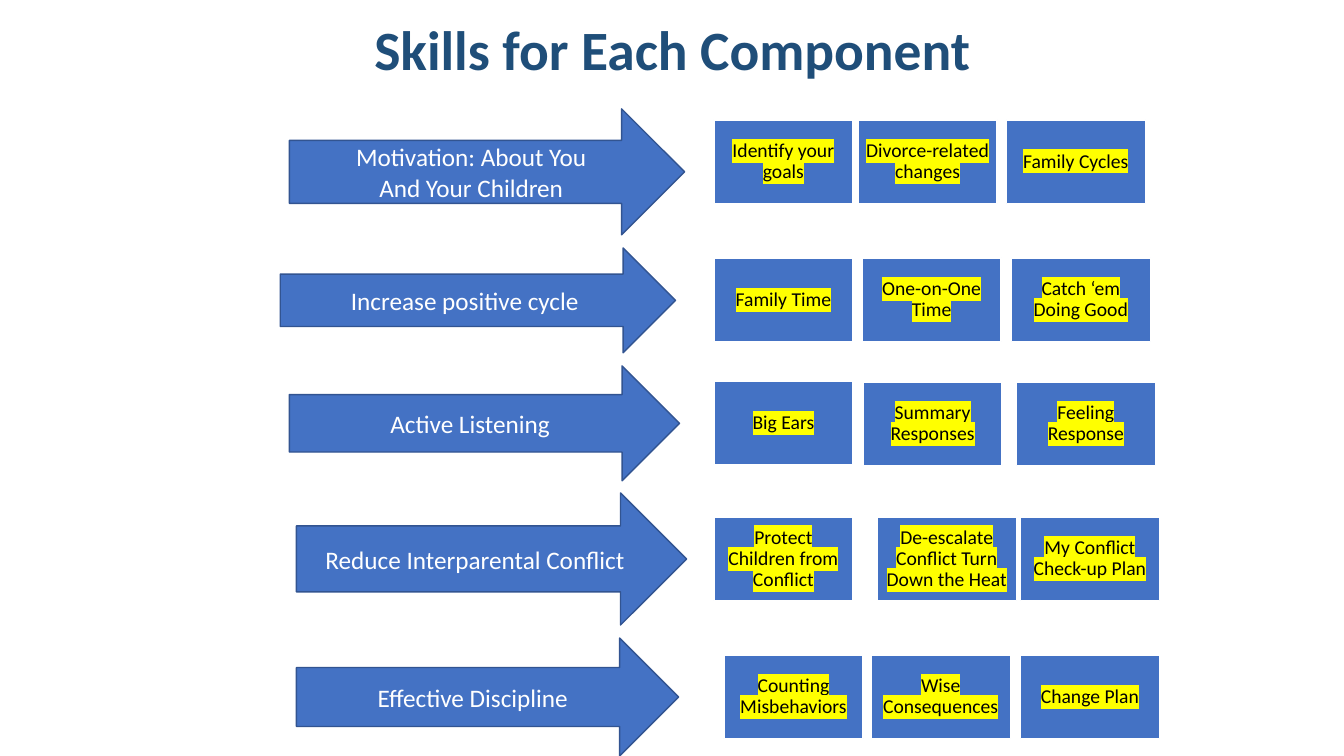
import pptx
import pptx.util
import pptx.dml.color
import pptx.enum.shapes
import pptx.enum.text
import pptx.oxml.ns
import lxml.etree

PX = 9144
COLORS = {"title": "1F4E79", "blue": "4472C4", "edge": "325491",
          "white": "FFFFFF", "black": "000000", "marker": "FFFF00"}
CARD_WIDTH, CARD_HEIGHT = 138, 83
ROWS = [
    ((287, 108, 392, 125), ["Motivation: About You", "And Your Children"],
     [(708, 119, "Identify your goals"), (851, 119, "Divorce-related changes"),
      (998, 119, "Family Cycles")]),
    ((278, 246, 392, 104), ["Increase positive cycle"],
     [(708, 256, "Family Time"), (855, 256, "One-on-One Time"),
      (1003, 256, "Catch ‘em Doing Good")]),
    ((287, 363, 387, 114), ["Active Listening"],
     [(708, 378, "Big Ears"), (856, 379, "Summary Responses"),
      (1008, 379, "Feeling Response")]),
    ((294, 489, 387, 131), ["Reduce Interparental Conflict"],
     [(708, 513, "Protect Children from Conflict"),
      (870, 513, "De-escalate Conflict Turn Down the Heat"),
      (1012, 513, "My Conflict Check-up Plan")]),
    ((294, 633, 379, 117), ["Effective Discipline"],
     [(718, 650, "Counting Misbehaviors"), (864, 650, "Wise Consequences"),
      (1012, 650, "Change Plan")]),
]


def rgb(name):
    """Return the named colour."""
    return pptx.dml.color.RGBColor.from_string(COLORS[name])


def scaled(box):
    """Turn a box in px into EMU lengths."""
    return [length * PX for length in box]


def write(shape, lines, color, spacing=1.0, inset=None, **font_format):
    """Write centred lines into a shape and return their spans."""
    frame = shape.text_frame
    frame.word_wrap = True
    frame.vertical_anchor = pptx.enum.text.MSO_ANCHOR.MIDDLE
    if inset is not None:
        for side in ("left", "top", "right", "bottom"):
            setattr(frame, f"margin_{side}", inset * PX)
    spans = []
    for index, line in enumerate(lines):
        para = frame.add_paragraph() if index else frame.paragraphs[0]
        para.alignment = pptx.enum.text.PP_ALIGN.CENTER
        para.line_spacing = spacing
        span = para.add_run()
        span.text = line
        for key, value in {"name": "Calibri", **font_format}.items():
            setattr(span.font, key, value)
        span.font.color.rgb = rgb(color)
        spans.append(span)
    return spans


def highlight(span, color):
    """Put a marker colour behind a span."""
    mark = lxml.etree.Element(pptx.oxml.ns.qn("a:highlight"))
    lxml.etree.SubElement(mark, pptx.oxml.ns.qn("a:srgbClr"), val=COLORS[color])
    properties = span.font._element
    properties.find(pptx.oxml.ns.qn("a:solidFill")).addnext(mark)


def add_block(page, kind, box, edge):
    """Add a blue block with a one-point edge."""
    block = page.shapes.add_shape(kind, *scaled(box))
    block.shadow.inherit = False
    block.fill.solid()
    block.fill.fore_color.rgb = rgb("blue")
    block.line.color.rgb = rgb(edge)
    block.line.width = pptx.util.Pt(1)
    return block


def add_title(page, box):
    """Add the heading."""
    title = page.shapes.add_textbox(*scaled(box))
    write(title, ["Skills for Each Component"], "title", 0.9,
          size=pptx.util.Pt(39.6), bold=True)


def add_arrow(page, box, lines):
    """Add the arrow that names a component."""
    arrow = add_block(page, pptx.enum.shapes.MSO_SHAPE.RIGHT_ARROW, box, "edge")
    write(arrow, lines, "white", size=pptx.util.Pt(18))


def add_card(page, box, skill):
    """Add a card with one highlighted skill."""
    card = add_block(page, pptx.enum.shapes.MSO_SHAPE.RECTANGLE, box, "white")
    for span in write(card, [skill], "black", 0.9, inset=6, size=pptx.util.Pt(14)):
        highlight(span, "marker")


def main():
    """Build the deck."""
    deck = pptx.Presentation()
    deck.slide_width, deck.slide_height = scaled((1333, 750))
    page = deck.slides.add_slide(deck.slide_layouts[6])
    add_title(page, (217, 30, 900, 45))
    for arrow_box, component, cards in ROWS:
        for left, top, skill in cards:
            add_card(page, (left, top, CARD_WIDTH, CARD_HEIGHT), skill)
        add_arrow(page, arrow_box, component)
    deck.save("out.pptx")


if __name__ == "__main__":
    main()
